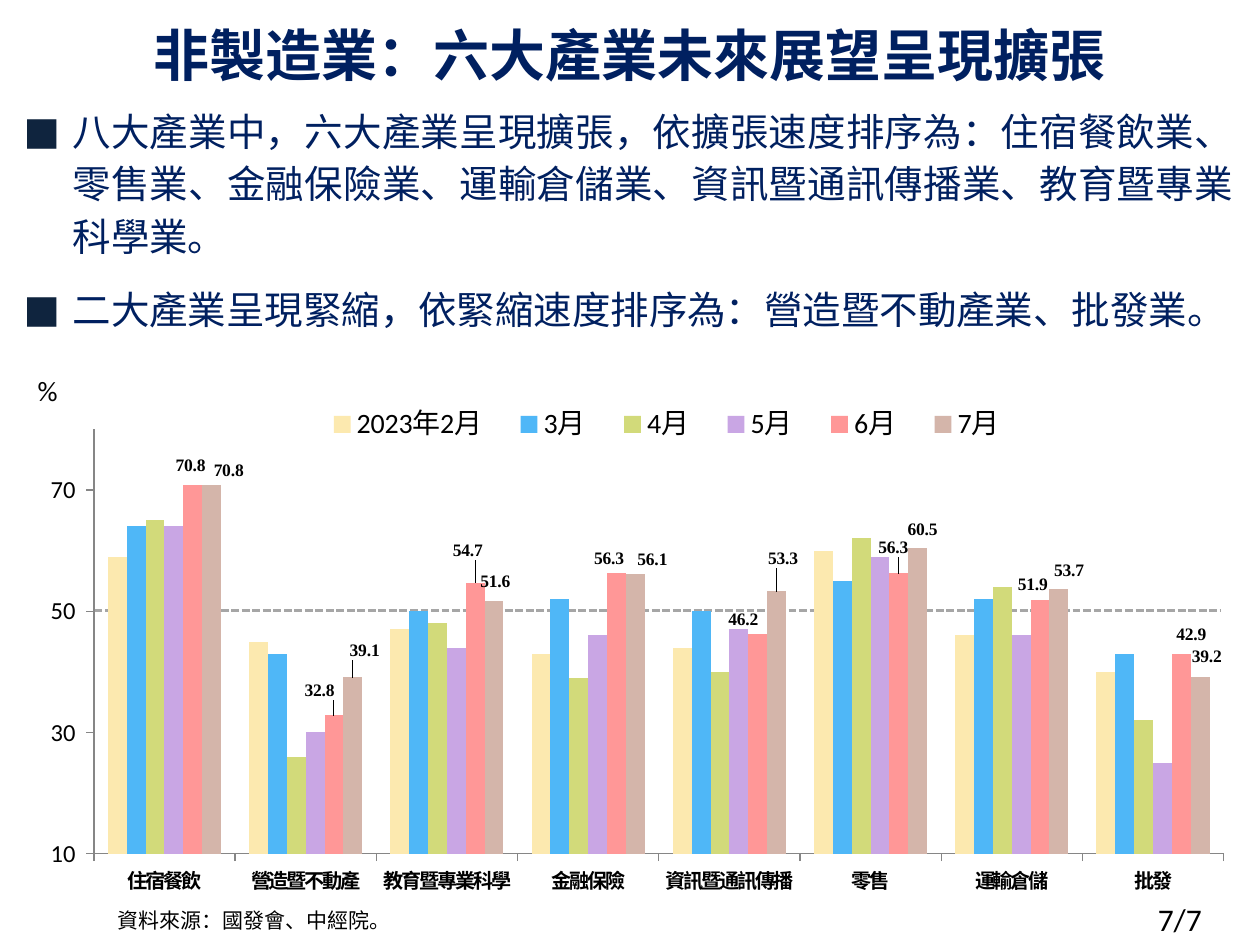
from lxml import etree
from pptx import Presentation
from pptx.chart.data import CategoryChartData
from pptx.dml.color import RGBColor
from pptx.enum.chart import XL_CHART_TYPE, XL_LABEL_POSITION, XL_LEGEND_POSITION, XL_TICK_MARK
from pptx.enum.dml import MSO_LINE
from pptx.enum.shapes import MSO_CONNECTOR, MSO_SHAPE
from pptx.enum.text import MSO_ANCHOR, PP_ALIGN
from pptx.oxml.ns import qn
from pptx.util import Pt

COLUMN = XL_CHART_TYPE.COLUMN_CLUSTERED
ABOVE = XL_LABEL_POSITION.OUTSIDE_END
TOP_KEY = XL_LEGEND_POSITION.TOP
OUT, NO_TICK = XL_TICK_MARK.OUTSIDE, XL_TICK_MARK.NONE
DASH = MSO_LINE.SQUARE_DOT
STRAIGHT = MSO_CONNECTOR.STRAIGHT
ROUND = MSO_SHAPE.ROUNDED_RECTANGLE
TOP, MIDDLE = MSO_ANCHOR.TOP, MSO_ANCHOR.MIDDLE
LEFT, CENTER, JUSTIFY = PP_ALIGN.LEFT, PP_ALIGN.CENTER, PP_ALIGN.JUSTIFY

NAVY = RGBColor(0x00, 0x20, 0x60)
INK = RGBColor(0x0F, 0x24, 0x3E)
BLACK = RGBColor(0, 0, 0)
GRAY = RGBColor(0xA6, 0xA6, 0xA6)
AXIS = RGBColor(0x86, 0x86, 0x86)
SAND = RGBColor(0xFC, 0xE9, 0xAF)
BLUE = RGBColor(0x4F, 0xB7, 0xF7)
LIME = RGBColor(0xD2, 0xDA, 0x7A)
LILAC = RGBColor(0xC9, 0xA6, 0xE4)
CORAL = RGBColor(0xFF, 0x97, 0x97)
TAUPE = RGBColor(0xD4, 0xB5, 0xAA)

LATIN, SERIF = "Calibri", "Times New Roman"
HAN, NOTE = "Noto Sans CJK SC", "Noto Sans CJK JP"

CATS = ["住宿餐飲", "營造暨不動產", "教育暨專業科學", "金融保險",
        "資訊暨通訊傳播", "零售", "運輸倉儲", "批發"]
MONTHS = [
    ("2023年2月", SAND, [59, 45, 47, 43, 44, 60, 46, 40]),
    ("3月", BLUE, [64, 43, 50, 52, 50, 55, 52, 43]),
    ("4月", LIME, [65, 26, 48, 39, 40, 62, 54, 32]),
    ("5月", LILAC, [64, 30, 44, 46, 47, 59, 46, 25]),
    ("6月", CORAL, [70.8, 32.8, 54.7, 56.3, 46.2, 56.3, 51.9, 42.9]),
    ("7月", TAUPE, [70.8, 39.1, 51.6, 56.1, 53.3, 60.5, 53.7, 39.2]),
]
SHIFTS = {
    "6月": [(0, -3), (-7, -6), (-3, -10), (-3, 0), (-7, 0), (-2, -6), (-3, 0), (7, -3)],
    "7月": [(11, 0), (8, -7), (2, -3), (11, 0), (5, -10), (4, -2), (7, -2), (5, -3)],
}
POINTS = [
    "八大產業中，六大產業呈現擴張，依擴張速度排序為：住宿餐飲業、零售業、金融保險業、"
    "運輸倉儲業、資訊暨通訊傳播業、教育暨專業科學業。",
    "二大產業呈現緊縮，依緊縮速度排序為：營造暨不動產業、批發業。",
]


def style(font, name, size, color=BLACK, bold=False):
    font.name, font.size, font.bold = name, Pt(size), bold
    font.color.rgb = color
    etree.SubElement(font._rPr, qn("a:ea"), typeface=name)


def indent(par, left, first):
    props = par._p.get_or_add_pPr()
    props.set("marL", str(Pt(left)))
    props.set("indent", str(Pt(first)))
    return props


def bullet(par):
    props = indent(par, 35.3, -28)
    color = etree.SubElement(props, qn("a:buClr"))
    etree.SubElement(color, qn("a:srgbClr"), val=str(INK))
    etree.SubElement(props, qn("a:buFont"), typeface=LATIN)
    etree.SubElement(props, qn("a:buChar"), char="■")


def panel(slide, box, anchor):
    shape = slide.shapes.add_shape(ROUND, *map(Pt, box))
    shape.shadow.inherit = False
    shape.fill.background()
    shape.line.fill.background()
    frame = shape.text_frame
    frame.word_wrap, frame.vertical_anchor = True, anchor
    return frame


def label(slide, box, text, name, size):
    frame = slide.shapes.add_textbox(*map(Pt, box)).text_frame
    frame.word_wrap = True
    par = frame.paragraphs[0]
    par.text, par.alignment = text, LEFT
    style(par.font, name, size)
    return par


def title(slide, box):
    par = panel(slide, box, MIDDLE).paragraphs[0]
    par.text, par.alignment = "非製造業：六大產業未來展望呈現擴張", CENTER
    par.line_spacing = Pt(40)
    style(par.font, HAN, 32, NAVY, True)


def body(slide, box):
    frame = panel(slide, box, TOP)
    frame.margin_top = frame.margin_bottom = 0
    for i, text in enumerate(POINTS):
        par = frame.add_paragraph() if i else frame.paragraphs[0]
        par.text, par.alignment = text, JUSTIFY
        par.line_spacing, par.space_before = Pt(30), Pt(6 + 6 * i)
        bullet(par)
        style(par.font, HAN, 22, NAVY)


def layout(parent, spot, **parts):
    outer = etree.Element(qn("c:layout"))
    inner = etree.SubElement(outer, qn("c:manualLayout"))
    for tag, val in parts.items():
        etree.SubElement(inner, qn("c:" + tag), val=str(val))
    old = parent.find(qn("c:layout"))
    if old is not None:
        parent.remove(old)
    parent.insert(spot, outer)


def tags(series, shifts, wide, high):
    for i, (dx, dy) in enumerate(shifts):
        tag = series.points[i].data_label
        style(tag.font, SERIF, 10, BLACK, True)
        tag.position = ABOVE
    for node, (dx, dy) in zip(series._element.iter(qn("c:dLbl")), shifts):
        layout(node, 1, x=dx / wide, y=dy / high)
        form = etree.Element(qn("c:numFmt"), formatCode="0.0_ ", sourceLinked="0")
        node.insert(2, form)


def rule(axis):
    axis.has_major_gridlines = False
    axis.major_tick_mark, axis.minor_tick_mark = OUT, NO_TICK
    axis.format.line.color.rgb = AXIS
    axis.format.line.width = Pt(0.75)


def graph(slide, box):
    x, y, wide, high = box
    line = slide.shapes.add_connector(
        STRAIGHT, Pt(x + 39), Pt(y + 136), Pt(x + 682.5), Pt(y + 136))
    line.line.color.rgb, line.line.width = GRAY, Pt(1.5)
    line.line.dash_style = DASH
    etree.SubElement(line._element.spPr, qn("a:effectLst"))

    data = CategoryChartData()
    data.categories = CATS
    for name, color, vals in MONTHS:
        data.add_series(name, vals)
    chart = slide.shapes.add_chart(COLUMN, *map(Pt, box), data).chart
    chart.has_title = False
    style(chart.font, LATIN, 18)
    chart.has_legend = True
    key = chart.legend
    key.position, key.include_in_layout = TOP_KEY, False
    style(key.font, LATIN, 16)
    layout(key._element, 1, xMode="edge", yMode="edge", x=0.23, y=0.05, w=0.6, h=0.09)

    plot = chart.plots[0]
    plot.gap_width, plot.overlap, plot.vary_by_categories = 150, 0, False
    area = chart._chartSpace.chart.plotArea
    layout(area, 0, layoutTarget="inner", xMode="edge", yMode="edge",
           x=0.056, y=0.104, w=0.935, h=0.78)
    for series, (name, color, vals) in zip(plot.series, MONTHS):
        series.format.fill.solid()
        series.format.fill.fore_color.rgb = color
        if name in SHIFTS:
            tags(series, SHIFTS[name], wide, high)

    cat, val = chart.category_axis, chart.value_axis
    rule(cat)
    rule(val)
    style(cat.tick_labels.font, HAN, 11.5, BLACK, True)
    cat.tick_labels.font._rPr.set("spc", "-100")
    val.minimum_scale, val.maximum_scale, val.major_unit = 10, 80, 20
    style(val.tick_labels.font, LATIN, 14)
    val.tick_labels.number_format = "0_ ;[Red]\\-0\\ "
    val.tick_labels.number_format_is_linked = False

    label(slide, (x - 0.6, y - 3, 45, 27), "%", LATIN, 16)


def foot(slide, box):
    x, y, wide, high = box
    label(slide, (x + 594.5, y, 65.5, 29), "7/7", LATIN, 18)
    par = label(slide, (x, y + 7, wide, 19.5), "資料來源：國發會、中經院。", NOTE, 12)
    par.line_spacing, par.space_before = Pt(12), Pt(2)
    indent(par, 21.6, -21.6)


def main():
    deck = Presentation()
    deck.slide_width, deck.slide_height = Pt(720), Pt(540)
    slide = deck.slides.add_slide(deck.slide_layouts[6])
    foot(slide, (60, 510.5, 705, 29))
    title(slide, (0, 0, 720, 60.5))
    body(slide, (-8.6, 50.4, 728.6, 158.4))
    graph(slide, (15, 213, 690.5, 311))
    deck.save("out.pptx")


if __name__ == "__main__":
    main()
